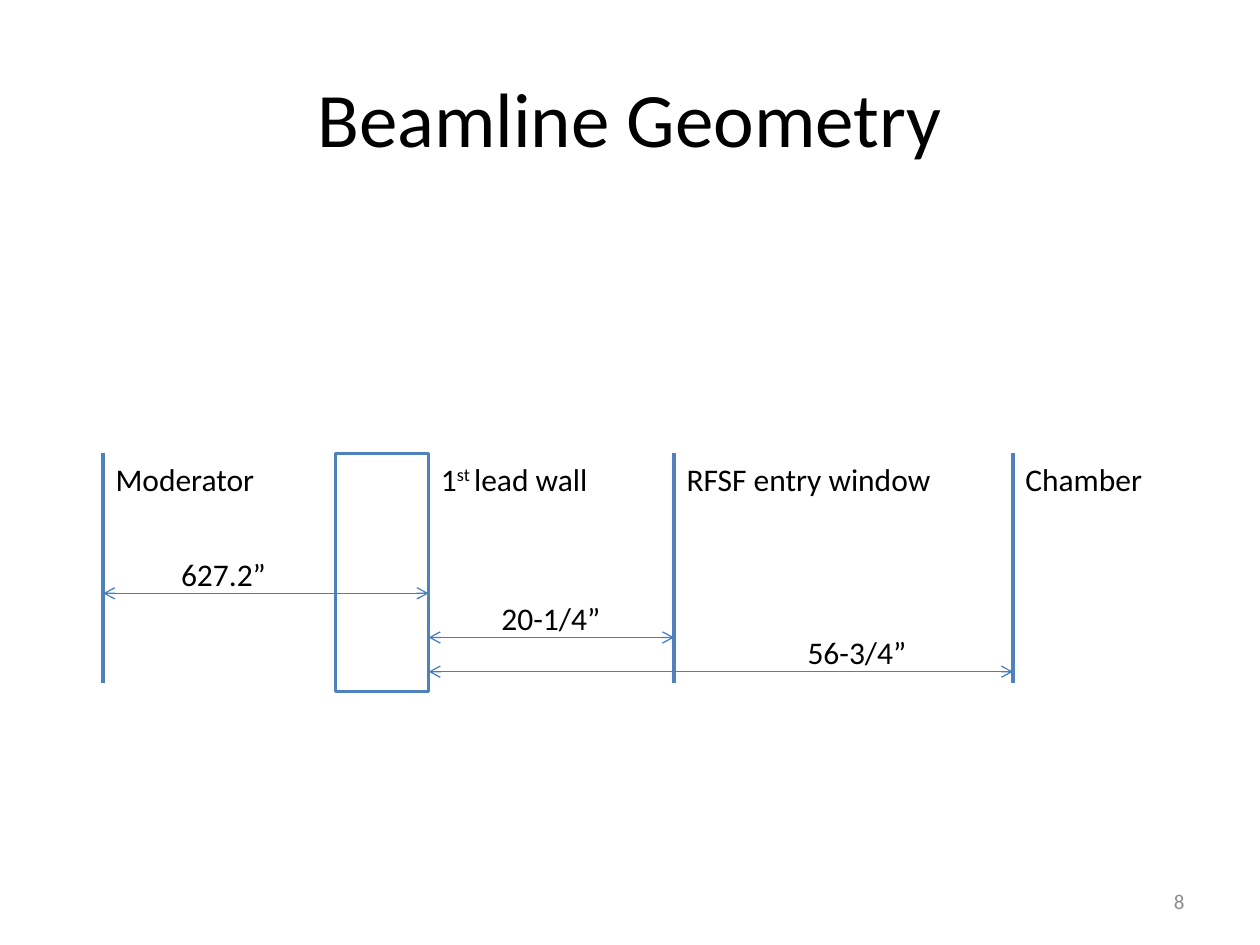
import pptx
import pptx.util
import pptx.dml.color
import pptx.enum.shapes
import pptx.enum.text
import pptx.oxml
import pptx.oxml.ns

Cm, Pt = pptx.util.Cm, pptx.util.Pt
Align = pptx.enum.text.PP_ALIGN
Anchor = pptx.enum.text.MSO_ANCHOR

TITLE = "Beamline Geometry"
NUMBER = "8"
PLANES = [
    ("Moderator", 2.08, 3.33),
    ("RFSF entry window", 13.59, 5.49),
    ("Chamber", 20.42, 2.9),
]
WALL = [("1", 0), ("st ", 30000), ("lead wall", 0)]
FACE, DEPTH, HEIGHT = 8.64, 1.88, 4.8
TOP, BASE = 9.14, 13.77
SPANS = [
    ("627.2”", 2.08, FACE, 11.96, 3.4, 2.24),
    ("20-1/4”", FACE, 13.59, 12.85, 9.86, 2.51),
    ("56-3/4”", FACE, 20.42, 13.54, 16.03, 2.51),
]
ROW, LIFT = 1.02, 0.9
BLUE, STEEL = "4F81BD", "4B7EBC"


def color(code):
    return pptx.dml.color.RGBColor.from_string(code)


def write(text, x, y, w, h=ROW, size=18, ink="000000", align=Align.LEFT,
          anchor=Anchor.TOP, wrap=False):
    frame = slide.shapes.add_textbox(Cm(x), Cm(y), Cm(w), Cm(h)).text_frame
    frame.word_wrap = wrap
    frame.vertical_anchor = anchor
    para = frame.paragraphs[0]
    para.alignment = align
    for part, shift in [(text, 0)] if isinstance(text, str) else text:
        run = para.add_run()
        run.text = part
        run.font.name = "Calibri"
        run.font.size = Pt(size)
        run.font.color.rgb = color(ink)
        if shift:
            run.font._element.set("baseline", str(shift))


def draw(x, y, right, base, ink, width, arrows=False):
    line = slide.shapes.add_connector(
        pptx.enum.shapes.MSO_CONNECTOR.STRAIGHT,
        Cm(x), Cm(y), Cm(right), Cm(base))
    line.line.color.rgb = color(ink)
    line.line.width = Pt(width)
    if arrows:
        for end in ("a:headEnd", "a:tailEnd"):
            tip = pptx.oxml.parse_xml(
                f"<{end} {pptx.oxml.ns.nsdecls('a')} type='arrow'/>")
            line.line._get_or_add_ln().append(tip)
    line._element.spPr.append(pptx.oxml.parse_xml(
        f"<a:effectLst {pptx.oxml.ns.nsdecls('a')}/>"))


deck = pptx.Presentation()
deck.slide_width, deck.slide_height = Cm(25.4), Cm(19.05)
slide = deck.slides.add_slide(deck.slide_layouts[6])

write(TITLE, 1.27, 0.76, 22.86, 3.18, size=44, align=Align.CENTER,
      anchor=Anchor.MIDDLE, wrap=True)

for name, x, width in PLANES:
    draw(x, TOP, x, BASE, BLUE, 2.25)
    write(name, x, TOP, width)

wall = slide.shapes.add_shape(
    pptx.enum.shapes.MSO_SHAPE.RECTANGLE,
    Cm(FACE - DEPTH), Cm(TOP), Cm(DEPTH), Cm(HEIGHT))
wall.shadow.inherit = False
wall.fill.background()
wall.line.color.rgb = color(BLUE)
wall.line.width = Pt(2)
write(WALL, FACE, TOP, 3.61)

for name, start, stop, y, x, width in SPANS:
    draw(start, y, stop, y, STEEL, 0.75, arrows=True)
    write(name, x, y - LIFT, width)

write(NUMBER, 18.21, 17.65, 5.92, size=12, ink="8C8C8C", align=Align.RIGHT,
      anchor=Anchor.MIDDLE, wrap=True)

deck.save("out.pptx")
